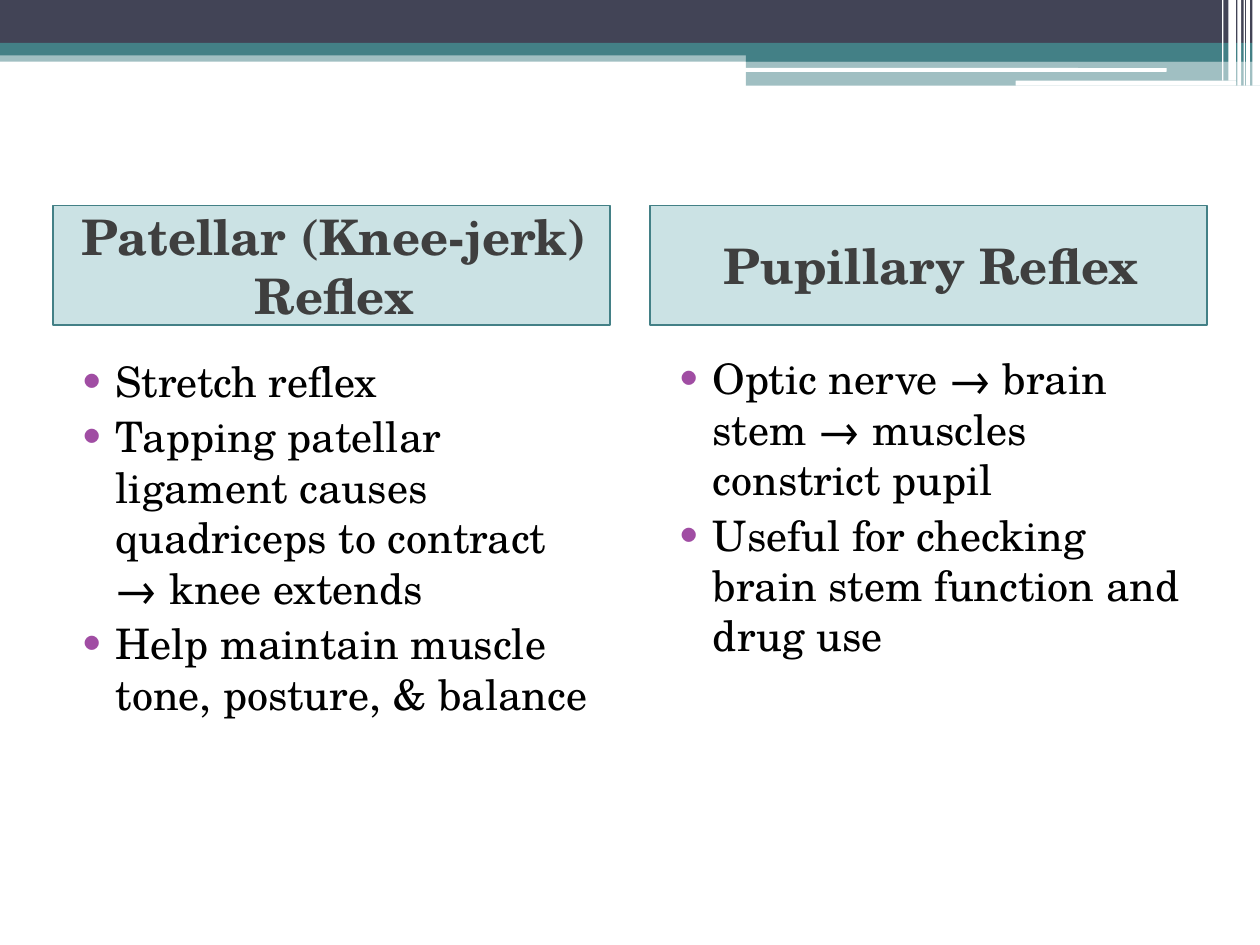
from lxml import etree
from pptx import Presentation
from pptx.dml.color import RGBColor
from pptx.enum.shapes import MSO_SHAPE as Shape
from pptx.enum.text import MSO_ANCHOR as Anchor, PP_ALIGN as Align
from pptx.oxml.ns import qn
from pptx.util import Inches, Pt

FONT = "TeX Gyre Schola"
COLORS = {"navy": "424456", "teal": "438086", "white": "FFFFFF", "header": "328E97",
          "heading": "3F3F3F", "body": "000000", "bullet": "A04DA3"}

# Heading, body top, body height, bullet points
COLUMNS = [
    ("Patellar (Knee-jerk) Reflex", 2.77, 4.44, [
        "Stretch reflex",
        "Tapping patellar ligament causes quadriceps to contract → knee extends",
        "Help maintain muscle tone, posture, & balance"]),
    ("Pupillary Reflex", 2.75, 4.17, [
        "Optic nerve → brain stem → muscles constrict pupil",
        "Useful for checking brain stem function and drug use"]),
]

# Left, top, width, height, colour, opacity in percent
BANDS = [
    (0, 0.4, 10, 0.09, "teal", 50),
    (0, 0, 10, 0.34, "navy", 100),
    (0, 0.34, 10, 0.1, "teal", 100),
    (5.92, 0.39, 4.08, 0.1, "teal", 100),
    (5.92, 0.48, 4.08, 0.2, "teal", 50),
]
ROUNDED_LINES = [(5.91, 0.54, 3.35, 0.03), (8.06, 0.64, 1.75, 0.04)]
# Left, width, height of the vertical stripes
STRIPES = [(9.94, 0.06, 0.68), (9.89, 0.03, 0.68), (9.87, 0.01, 0.68),
           (9.82, 0.03, 0.68), (9.75, 0.06, 0.64), (9.7, 0.01, 0.64)]

SLIDE_W, SLIDE_H = 10, 7.5
MARGIN, COLUMN_W = 0.42, 4.42
COLUMN_STEP = SLIDE_W - 2 * MARGIN - COLUMN_W
HEADER_TOP, HEADER_H = 1.63, 0.95


def rgb(name):
    return RGBColor.from_string(COLORS[name])


def add_block(slide, box, color, opacity=100, kind=Shape.RECTANGLE, line=None):
    sp = slide.shapes.add_shape(kind, *map(Inches, box))
    sp.shadow.inherit = False
    sp.fill.solid()
    sp.fill.fore_color.rgb = rgb(color)
    if opacity < 100:
        clr = sp.fill._xPr.find(qn("a:solidFill"))[0]
        etree.SubElement(clr, qn("a:alpha"), val=str(opacity * 1000))
    if line:
        sp.line.color.rgb = rgb(line)
        sp.line.width = Pt(1)
    else:
        sp.line.fill.background()
    return sp


def write(sp, lines, size, color, bold=False, align=Align.LEFT, anchor=Anchor.TOP,
          indent=(0, 0), bullet=None, space_before=0):
    tf = sp.text_frame
    tf.word_wrap = True
    tf.vertical_anchor = anchor
    for i, line in enumerate(lines):
        p = tf.paragraphs[0] if i == 0 else tf.add_paragraph()
        p.alignment = align
        p.space_before = Pt(space_before if i else 0)
        pPr = p._p.get_or_add_pPr()
        pPr.set("marL", str(Inches(indent[0])))
        pPr.set("indent", str(Inches(indent[1])))
        if bullet:
            clr = etree.SubElement(pPr, qn("a:buClr"))
            etree.SubElement(clr, qn("a:srgbClr"), val=COLORS["bullet"])
            etree.SubElement(pPr, qn("a:buFont"), typeface=FONT)
            etree.SubElement(pPr, qn("a:buChar"), char=bullet)
        r = p.add_run()
        r.text = line
        r.font.name = FONT
        r.font.size = Pt(size)
        r.font.bold = bold
        r.font.color.rgb = rgb(color)


def main():
    prs = Presentation()
    prs.slide_width, prs.slide_height = Inches(SLIDE_W), Inches(SLIDE_H)
    slide = prs.slides.add_slide(prs.slide_layouts[6])

    for *box, color, opacity in BANDS:
        add_block(slide, box, color, opacity)
    for box in ROUNDED_LINES:
        add_block(slide, box, "white", kind=Shape.ROUNDED_RECTANGLE)
    for left, width, height in STRIPES:
        add_block(slide, (left, 0, width, height), "white")

    for i, (heading, top, height, points) in enumerate(COLUMNS):
        left = MARGIN + i * COLUMN_STEP
        header = add_block(slide, (left, HEADER_TOP, COLUMN_W, HEADER_H), "header",
                           opacity=25, line="teal")
        write(header, [heading], 28, "heading", bold=True, align=Align.CENTER,
              anchor=Anchor.MIDDLE, indent=(0.05, -0.01))
        body = slide.shapes.add_textbox(*map(Inches, (left, top, COLUMN_W, height)))
        write(body, points, 24, "body", indent=(0.4, -0.29), bullet="•", space_before=3)

    prs.save("out.pptx")


if __name__ == "__main__":
    main()
